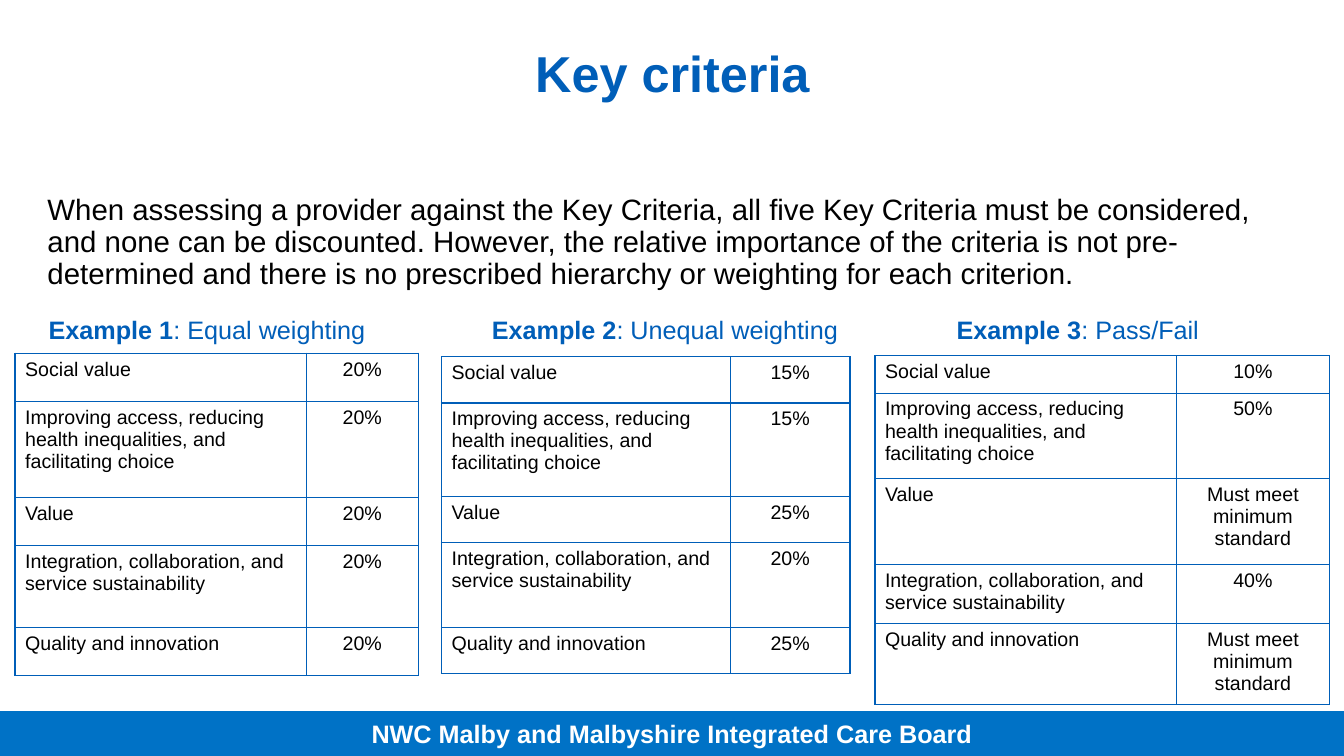
"""Build the key criteria slide with three example weighting tables."""
import pptx
import pptx.dml.color
import pptx.enum.shapes
import pptx.enum.text
import pptx.oxml
import pptx.oxml.ns
import pptx.util

TITLE = "Key criteria"
BODY = (
    "When assessing a provider against the Key Criteria, all five Key Criteria must be "
    "considered, and none can be discounted. However, the relative importance of the "
    "criteria is not pre-determined and there is no prescribed hierarchy or weighting "
    "for each criterion."
)
FOOTER = "NWC Malby and Malbyshire Integrated Care Board"
CRITERIA = [
    "Social value",
    "Improving access, reducing health inequalities, and facilitating choice",
    "Value",
    "Integration, collaboration, and service sustainability",
    "Quality and innovation",
]
MINIMUM = "Must meet minimum standard"
EXAMPLES = [
    dict(name="Equal weighting", scores=["20%"] * 5,
         label=(2.5, 40.93, 25.8, 5.33), grid=(1.12, 46.73, 30, 42.67),
         columns=(2.89, 1.11), rows=(0.48, 0.95, 0.48, 0.81, 0.48)),
    dict(name="Unequal weighting", scores=["15%", "15%", "25%", "20%", "25%"],
         label=(35.63, 40.93, 27.68, 5.33), grid=(32.85, 47.2, 30.4, 41.9),
         columns=(2.87, 1.19), rows=(0.46, 0.93, 0.46, 0.84, 0.46)),
    dict(name="Pass/Fail", scores=["10%", "50%", MINIMUM, "40%", MINIMUM],
         label=(65.19, 40.93, 30, 5.33), grid=(65.1, 47.07, 33.83, 46.13),
         columns=(2.99, 1.52), rows=(0.37, 0.85, 0.85, 0.59, 0.8)),
]
BOXES = dict(title=(34.88, 0.13, 30.31, 20), body=(2.78, 25.2, 94.9, 15.2),
             footer=(0, 94.13, 100, 5.87))
THEME = dict(font="Arial", blue="005EB8", bar="0072C6", black="000000", white="FFFFFF",
             title=36, body=21, label=18, cell=14, line=1)
LEFT, CENTER = pptx.enum.text.PP_ALIGN.LEFT, pptx.enum.text.PP_ALIGN.CENTER
MIDDLE, TOP = pptx.enum.text.MSO_ANCHOR.MIDDLE, pptx.enum.text.MSO_ANCHOR.TOP

prs = pptx.Presentation()
prs.slide_width = pptx.util.Inches(13.33)
prs.slide_height = pptx.util.Inches(7.5)


def color(name):
    return pptx.dml.color.RGBColor.from_string(THEME[name])


def emu(box):
    sizes = (prs.slide_width, prs.slide_height) * 2
    return [round(share * size / 100) for share, size in zip(box, sizes)]


def apply(target, values):
    for key, value in values.items():
        setattr(target, key, value)


def place(shape, box):
    apply(shape, dict(zip(("left", "top", "width", "height"), emu(box))))


def write(tf, runs, size, ink, **paragraph):
    p = tf.paragraphs[0]
    apply(p, paragraph)
    for text, bold in runs:
        r = p.add_run()
        r.text = text
        apply(r.font, dict(name=THEME["font"], size=pptx.util.Pt(THEME[size]), bold=bold))
        r.font.color.rgb = color(ink)
    return p


def outline(cell):
    props = cell._tc.get_or_add_tcPr()
    width = pptx.util.Pt(THEME["line"])
    for index, side in enumerate(("lnL", "lnR", "lnT", "lnB")):
        props.insert(index, pptx.oxml.parse_xml(
            f'<a:{side} {pptx.oxml.ns.nsdecls("a")} w="{width}"><a:solidFill>'
            f'<a:srgbClr val="{THEME["blue"]}"/></a:solidFill></a:{side}>'))


def split(total, weights):
    return [round(total * weight / sum(weights)) for weight in weights]


def add_example(s, number, example):
    label = s.shapes.add_textbox(*emu(example["label"]))
    label.text_frame.word_wrap = True
    write(label.text_frame, [(f"Example {number}", True), (f": {example['name']}", False)],
          "label", "blue", alignment=CENTER)
    box = emu(example["grid"])
    table = s.shapes.add_table(len(CRITERIA), 2, *box).table
    apply(table, dict(first_row=False, horz_banding=False))
    for column, width in zip(table.columns, split(box[2], example["columns"])):
        column.width = width
    for row, height in zip(table.rows, split(box[3], example["rows"])):
        row.height = height
    for row, texts in zip(table.rows, zip(CRITERIA, example["scores"])):
        for cell, text, align in zip(row.cells, texts, (LEFT, CENTER)):
            cell.fill.solid()
            cell.fill.fore_color.rgb = color("white")
            cell.vertical_anchor = TOP
            outline(cell)
            write(cell.text_frame, [(text, False)], "cell", "black", alignment=align)


def main():
    s = prs.slides.add_slide(prs.slide_layouts[1])
    bar = s.shapes.add_shape(pptx.enum.shapes.MSO_SHAPE.RECTANGLE, *emu(BOXES["footer"]))
    bar.shadow.inherit = False
    bar.fill.solid()
    bar.fill.fore_color.rgb = bar.line.color.rgb = color("bar")
    bar.line.width = pptx.util.Pt(THEME["line"])
    bar.text_frame.vertical_anchor = MIDDLE
    write(bar.text_frame, [(FOOTER, True)], "label", "white", alignment=CENTER)

    title, body = s.placeholders
    fit = pptx.enum.text.MSO_AUTO_SIZE.NONE
    for shape, box, anchor in ((title, "title", MIDDLE), (body, "body", TOP)):
        place(shape, BOXES[box])
        apply(shape.text_frame, dict(vertical_anchor=anchor, word_wrap=True, auto_size=fit))
    write(title.text_frame, [(TITLE, True)], "title", "blue",
          alignment=CENTER, line_spacing=0.9)
    p = write(body.text_frame, [(BODY, False)], "body", "black", alignment=LEFT,
              line_spacing=0.9, space_before=pptx.util.Pt(10))
    props = p._p.get_or_add_pPr()
    for key in ("marL", "indent"):
        props.set(key, "0")
    props.append(pptx.oxml.parse_xml(f'<a:buNone {pptx.oxml.ns.nsdecls("a")}/>'))

    for number, example in enumerate(EXAMPLES, 1):
        add_example(s, number, example)
    prs.save("out.pptx")


if __name__ == "__main__":
    main()
